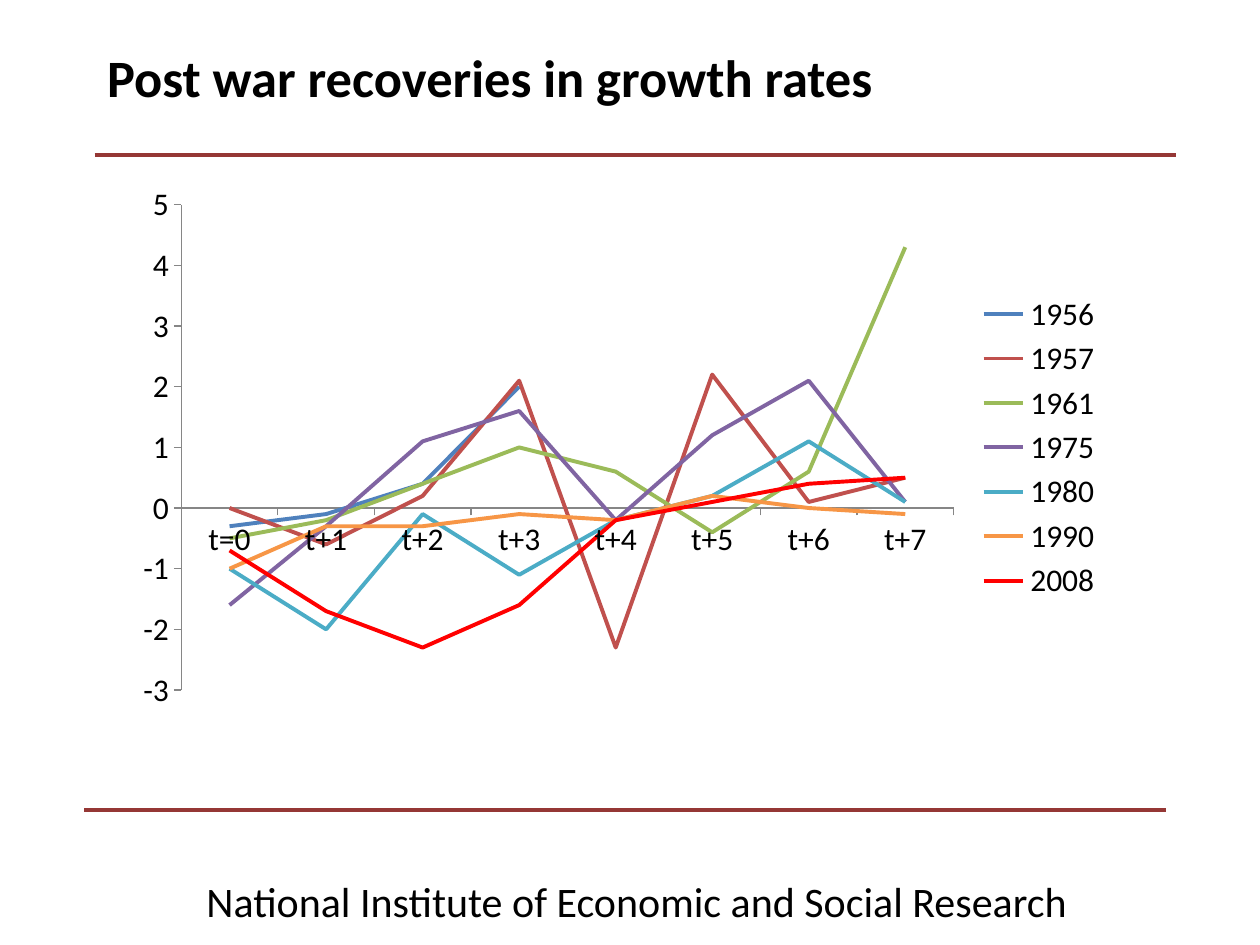
from dataclasses import dataclass

from lxml.etree import SubElement
from pptx import Presentation
from pptx.chart.data import CategoryChartData
from pptx.dml.color import RGBColor
from pptx.enum.chart import XL_CHART_TYPE, XL_LEGEND_POSITION, XL_TICK_MARK
from pptx.enum.shapes import MSO_CONNECTOR
from pptx.enum.text import MSO_ANCHOR, PP_ALIGN
from pptx.oxml.ns import qn
from pptx.util import Inches, Pt


@dataclass(frozen=True)
class Theme:
    font: str = "Calibri"
    ink: str = "000000"
    rule: str = "953735"
    axis: str = "868686"
    title_size: float = 30
    footer_size: float = 24
    chart_size: float = 18
    line_width: float = 2.25
    axis_width: float = 0.75
    series: tuple = ("4F81BD", "C0504D", "9BBB59", "8064A2",
                     "4BACC6", "F79646", "FF0000")


class SlideBuilder:
    def __init__(self, prs, theme):
        self.prs = prs
        self.theme = theme
        self.s = prs.slides.add_slide(prs.slide_layouts.get_by_name("Title Only"))

    def place(self, x, y, w, h):
        width, height = self.prs.slide_width, self.prs.slide_height
        return [round(v) for v in (x * width, y * height, w * width, h * height)]

    def style_font(self, font, size, bold=False):
        font.name = self.theme.font
        font.size = Pt(size)
        font.bold = bold
        font.color.rgb = RGBColor.from_string(self.theme.ink)

    def style_line(self, line, color, width):
        line.color.rgb = RGBColor.from_string(color)
        line.width = Pt(width)

    def set_text(self, sp, text, size, bold=False):
        tf = sp.text_frame
        tf.word_wrap = True
        tf.vertical_anchor = MSO_ANCHOR.TOP
        p = tf.paragraphs[0]
        p.text = text
        p.alignment = PP_ALIGN.LEFT
        self.style_font(p.font, size, bold)

    def title(self, text, *box):
        sp = self.s.shapes.title
        sp.left, sp.top, sp.width, sp.height = self.place(*box)
        self.set_text(sp, text, self.theme.title_size, True)

    def footer(self, text, *box):
        sp = self.s.shapes.add_textbox(*self.place(*box))
        self.set_text(sp, text, self.theme.footer_size)

    def rule(self, x, y, w):
        left, top, width, _ = self.place(x, y, w, 0)
        line = self.s.shapes.add_connector(
            MSO_CONNECTOR.STRAIGHT, left, top, left + width, top)
        self.style_line(line.line, self.theme.rule, self.theme.line_width)
        SubElement(line._element.spPr, qn("a:effectLst"))

    def line_chart(self, categories, series, *box):
        data = CategoryChartData()
        data.categories = categories
        for name, values in series.items():
            data.add_series(name, values)
        chart = self.s.shapes.add_chart(
            XL_CHART_TYPE.LINE, *self.place(*box), data).chart
        self.style_font(chart.font, self.theme.chart_size)
        chart.has_title = False
        chart.has_legend = True
        chart.legend.position = XL_LEGEND_POSITION.RIGHT
        chart.legend.include_in_layout = False
        chart.plots[0].vary_by_categories = False
        for axis in (chart.category_axis, chart.value_axis):
            axis.has_major_gridlines = False
            axis.major_tick_mark = XL_TICK_MARK.OUTSIDE
            self.style_line(axis.format.line, self.theme.axis, self.theme.axis_width)
        axis = chart.value_axis
        axis.minimum_scale, axis.maximum_scale, axis.major_unit = -3, 5, 1
        for ser, color in zip(chart.plots[0].series, self.theme.series):
            ser.smooth = False
            self.style_line(ser.format.line, color, self.theme.line_width)


def main():
    prs = Presentation()
    prs.slide_width, prs.slide_height = Inches(10), Inches(7.5)
    slide = SlideBuilder(prs, Theme())
    slide.rule(0.075, 0.164, 0.858)
    slide.rule(0.067, 0.857, 0.858)
    slide.footer("National Institute of Economic and Social Research",
                 0.154, 0.92, 0.795, 0.053)
    slide.title("Post war recoveries in growth rates", 0.075, 0.041, 0.661, 0.081)
    recoveries = {
        "1956": (-0.3, -0.1, 0.4, 2, None, None, None, None),
        "1957": (0, -0.6, 0.2, 2.1, -2.3, 2.2, 0.1, 0.5),
        "1961": (-0.5, -0.2, 0.4, 1, 0.6, -0.4, 0.6, 4.3),
        "1975": (-1.6, -0.3, 1.1, 1.6, -0.2, 1.2, 2.1, 0.1),
        "1980": (-1, -2, -0.1, -1.1, -0.2, 0.2, 1.1, 0.1),
        "1990": (-1, -0.3, -0.3, -0.1, -0.2, 0.2, 0, -0.1),
        "2008": (-0.7, -1.7, -2.3, -1.6, -0.2, 0.1, 0.4, 0.5),
    }
    years = ["t=0"] + [f"t+{n}" for n in range(1, 8)]
    slide.line_chart(years, recoveries, 0.098, 0.185, 0.787, 0.577)
    prs.save("out.pptx")


if __name__ == "__main__":
    main()
